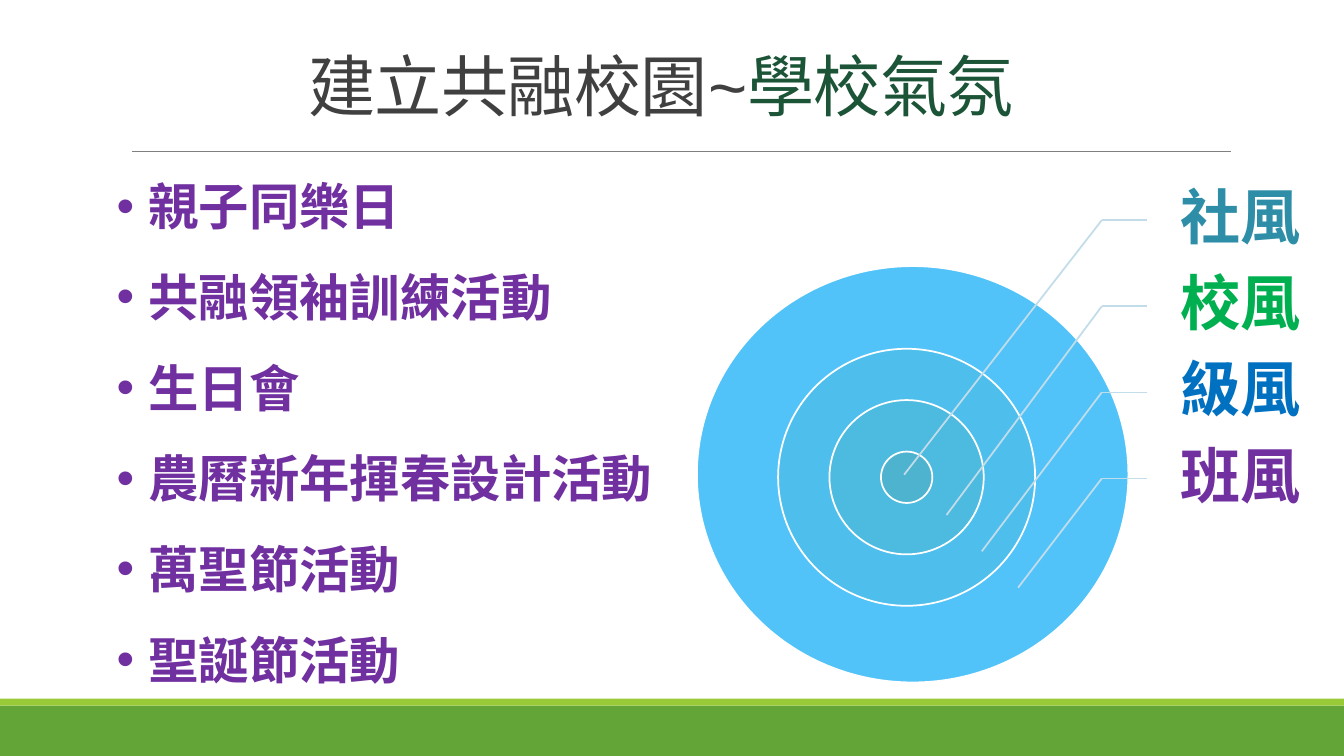
from lxml import etree
from pptx import Presentation
from pptx.dml.color import RGBColor
from pptx.enum.lang import MSO_LANGUAGE_ID
from pptx.enum.shapes import MSO_CONNECTOR, MSO_SHAPE
from pptx.enum.text import MSO_ANCHOR, PP_ALIGN
from pptx.oxml.ns import qn
from pptx.util import Pt

RECT = MSO_SHAPE.RECTANGLE
OVAL = MSO_SHAPE.OVAL
STRAIGHT = MSO_CONNECTOR.STRAIGHT
TOP = MSO_ANCHOR.TOP
MIDDLE = MSO_ANCHOR.MIDDLE
BOTTOM = MSO_ANCHOR.BOTTOM
LEFT = PP_ALIGN.LEFT
CENTER = PP_ALIGN.CENTER
JUSTIFY = PP_ALIGN.JUSTIFY
CHINESE = MSO_LANGUAGE_ID.TRADITIONAL_CHINESE

WHITE = RGBColor(0xFF, 0xFF, 0xFF)
GRASS = RGBColor(0x63, 0xA5, 0x37)
LIME = RGBColor(0x99, 0xCB, 0x38)
GRAY = RGBColor(0x80, 0x80, 0x80)
DARK = RGBColor(0x40, 0x40, 0x40)
FOREST = RGBColor(0x1C, 0x54, 0x38)
PURPLE = RGBColor(0x70, 0x30, 0xA0)
TEAL = RGBColor(0x2E, 0x8E, 0xA8)
GREEN = RGBColor(0x00, 0xB0, 0x50)
BLUE = RGBColor(0x00, 0x70, 0xC0)
PALE = RGBColor(0xC2, 0xDD, 0xE9)
SKY = RGBColor(0x51, 0xC3, 0xF9)
AZURE = RGBColor(0x4E, 0xBF, 0xED)
AQUA = RGBColor(0x4D, 0xBA, 0xDF)
LAGOON = RGBColor(0x4E, 0xB3, 0xCF)


class Painter:
    head = "Arial"
    body = "Calibri"
    stroke = 1.25

    def __init__(self, slide):
        self.slide = slide

    def shape(self, kind, x, y, w, h, fill, edge=None):
        item = self.slide.shapes.add_shape(kind, Pt(x), Pt(y), Pt(w), Pt(h))
        item.shadow.inherit = False
        item.fill.solid()
        item.fill.fore_color.rgb = fill
        if edge is None:
            item.line.fill.background()
        else:
            item.line.color.rgb = edge
            item.line.width = Pt(self.stroke)

    def line(self, x1, y1, x2, y2, color, width=stroke):
        item = self.slide.shapes.add_connector(
            STRAIGHT, Pt(x1), Pt(y1), Pt(x2), Pt(y2))
        item.line.color.rgb = color
        item.line.width = Pt(width)
        etree.SubElement(item._element.spPr, qn("a:effectLst"))

    def frame(self, x, y, w, h, anchor, insets=(7.2, 3.6, 7.2, 3.6)):
        box = self.slide.shapes.add_textbox(Pt(x), Pt(y), Pt(w), Pt(h))
        frame = box.text_frame
        frame.word_wrap = True
        frame.vertical_anchor = anchor
        (frame.margin_left, frame.margin_top,
         frame.margin_right, frame.margin_bottom) = map(Pt, insets)
        return frame

    def style(self, run, name, size, color, bold=False):
        font = run.font
        font.name = name
        font.size = Pt(size)
        font.bold = bold
        font.color.rgb = color
        font.language_id = CHINESE

    def title(self, parts, x, y, w, h):
        para = self.frame(x, y, w, h, BOTTOM).paragraphs[0]
        para.alignment = CENTER
        para.line_spacing = 0.85
        for text, color in parts:
            run = para.add_run()
            run.text = text
            self.style(run, self.head, 48, color)
            run._r.get_or_add_rPr().set("spc", "-50")

    def bullets(self, items, x, y, w, h):
        frame = self.frame(x, y, w, h, TOP)
        frame.text = "\n".join(items)
        for para in frame.paragraphs:
            para.alignment = JUSTIFY
            para.line_spacing = Pt(64.8)
            props = para._p.get_or_add_pPr()
            props.set("marL", str(Pt(22.5)))
            props.set("indent", str(Pt(-22.5)))
            etree.SubElement(props, qn("a:buFont")).set("typeface", self.head)
            etree.SubElement(props, qn("a:buChar")).set("char", "•")
            self.style(para.runs[0], self.body, 36, PURPLE, True)

    def label(self, text, x, y, w, h, color):
        frame = self.frame(x, y, w, h, MIDDLE, (23.8, 4.3, 4.3, 4.3))
        frame.text = text
        para = frame.paragraphs[0]
        para.alignment = LEFT
        para.line_spacing = 0.9
        self.style(para.runs[0], self.head, 43, color, True)


def main():
    deck = Presentation()
    deck.slide_width = Pt(960)
    deck.slide_height = Pt(540)
    paint = Painter(deck.slides.add_slide(deck.slide_layouts[6]))

    paint.shape(RECT, 0, 504, 960, 36, GRASS)
    paint.shape(RECT, 0, 499, 960, 5, LIME)
    paint.line(94.3, 108, 879.1, 108, GRAY, 0.5)
    paint.title([("建立共融校園~", DARK), ("學校氣氛", FOREST)],
                76.3, 0, 792, 92.9)
    paint.bullets(["親子同樂日", "共融領袖訓練活動", "生日會",
                   "農曆新年揮春設計活動", "萬聖節活動", "聖誕節活動"],
                  76.3, 100.1, 415, 398)

    paint.shape(OVAL, 497.8, 190.1, 308.2, 297.4, SKY, WHITE)
    for size, fill in [(183.6, AZURE), (110.2, AQUA), (36.7, LAGOON)]:
        paint.shape(OVAL, 647.6 - size / 2, 340.9 - size / 2,
                    size, size, fill, WHITE)

    winds = [("社風", TEAL, 645.8, 339.1), ("校風", GREEN, 676.1, 367.9),
             ("級風", BLUE, 701.3, 393.8), ("班風", PURPLE, 727.2, 419.8)]
    for row, (text, color, x, y) in enumerate(winds):
        top = 126.7 + 61.5 * row
        mid = top + 30.6
        paint.label(text, 819.4, top, 128.2, 61.2, color)
        paint.line(787, mid, 819.4, mid, PALE)
        paint.line(787, mid, x, y, PALE)

    deck.save("out.pptx")


if __name__ == "__main__":
    main()
